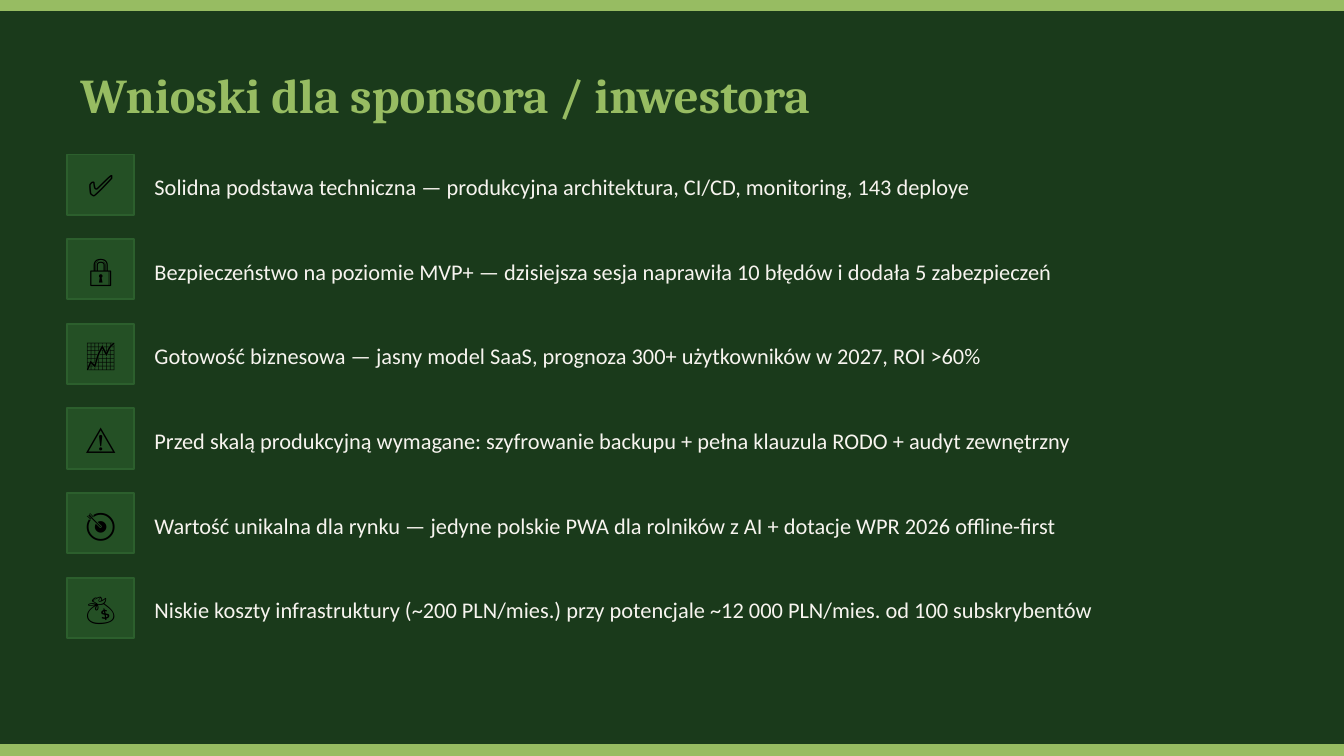
from lxml import etree
from pptx import Presentation
from pptx.dml.color import RGBColor as RGB
from pptx.enum.shapes import MSO_SHAPE as Preset
from pptx.enum.text import MSO_ANCHOR as Anchor, PP_ALIGN as Align
from pptx.oxml.ns import qn
from pptx.util import Cm, Pt

HEADING = "Wnioski dla sponsora / inwestora"
CONCLUSIONS = [
    ("✅", "Solidna podstawa techniczna — produkcyjna architektura, CI/CD, monitoring, 143 deploye"),
    ("🔒", "Bezpieczeństwo na poziomie MVP+ — dzisiejsza sesja naprawiła 10 błędów i dodała 5 zabezpieczeń"),
    ("📈", "Gotowość biznesowa — jasny model SaaS, prognoza 300+ użytkowników w 2027, ROI >60%"),
    ("⚠️", "Przed skalą produkcyjną wymagane: szyfrowanie backupu + pełna klauzula RODO + audyt zewnętrzny"),
    ("🎯", "Wartość unikalna dla rynku — jedyne polskie PWA dla rolników z AI + dotacje WPR 2026 offline-first"),
    ("💰", "Niskie koszty infrastruktury (~200 PLN/mies.) przy potencjale ~12 000 PLN/mies. od 100 subskrybentów"),
]

COLORS = {
    "background": "1A3A1B",
    "accent": "97BC62",
    "tile": "2C5F2D",
    "icon": "000000",
    "body": "F7F4EF",
}
FONTS = {
    "heading": {"name": "Cambria", "size": Pt(26), "bold": True},
    "icon": {"name": "Calibri", "size": Pt(16)},
    "body": {"name": "Calibri", "size": Pt(12)},
}
FRAME = {"word_wrap": True, "vertical_anchor": Anchor.MIDDLE}
NO_INSETS = {"margin_left": 0, "margin_right": 0, "margin_top": 0, "margin_bottom": 0}

WIDTH, HEIGHT, BAND = 25.4, 14.29, 0.2
FIRST_ROW, ROW_PITCH = 2.92, 1.6
TILE_LEFT, TILE_WIDTH, TILE_HEIGHT = 1.27, 1.27, 1.14
BODY_LEFT, BODY_WIDTH, BODY_HEIGHT, BODY_DROP = 2.92, 21.59, 1.02, 0.1


def apply(target, values):
    for attribute, value in values.items():
        setattr(target, attribute, value)


def write(owner, wording, font, color, align=Align.LEFT, **frame_values):
    frame = owner.text_frame
    apply(frame, {**FRAME, **frame_values})
    paragraph = frame.paragraphs[0]
    paragraph.alignment = align
    run = paragraph.add_run()
    run.text = wording
    apply(run.font, FONTS[font])
    run.font.color.rgb = RGB.from_string(COLORS[color])


def add_rect(shapes, box, color, opacity=100):
    rect = shapes.add_shape(Preset.RECTANGLE, *map(Cm, box))
    rect.shadow.inherit = False
    rect.fill.solid()
    rect.fill.fore_color.rgb = rect.line.color.rgb = RGB.from_string(COLORS[color])
    rect.line.width = Pt(1)
    if opacity < 100:
        fill_color = rect.fill._xPr.find(qn("a:solidFill"))[0]
        etree.SubElement(fill_color, qn("a:alpha"), val=str(opacity * 1000))
    return rect


def add_label(shapes, box, wording, font, color):
    write(shapes.add_textbox(*map(Cm, box)), wording, font, color, **NO_INSETS)


def main():
    deck = Presentation()
    apply(deck, {"slide_width": Cm(WIDTH), "slide_height": Cm(HEIGHT)})
    slide = deck.slides.add_slide(deck.slide_layouts[6])
    slide.background.fill.solid()
    slide.background.fill.fore_color.rgb = RGB.from_string(COLORS["background"])
    shapes = slide.shapes

    for band_top in (0, HEIGHT - BAND):
        add_rect(shapes, (0, band_top, WIDTH, BAND), "accent")
    add_label(shapes, (1.52, 1.02, 22.35, 1.52), HEADING, "heading", "accent")

    for row, (icon, conclusion) in enumerate(CONCLUSIONS):
        top = FIRST_ROW + row * ROW_PITCH
        tile = add_rect(shapes, (TILE_LEFT, top, TILE_WIDTH, TILE_HEIGHT), "tile", opacity=60)
        write(tile, icon, "icon", "icon", Align.CENTER)
        add_label(shapes, (BODY_LEFT, top + BODY_DROP, BODY_WIDTH, BODY_HEIGHT),
                  conclusion, "body", "body")

    deck.save("out.pptx")


if __name__ == "__main__":
    main()
